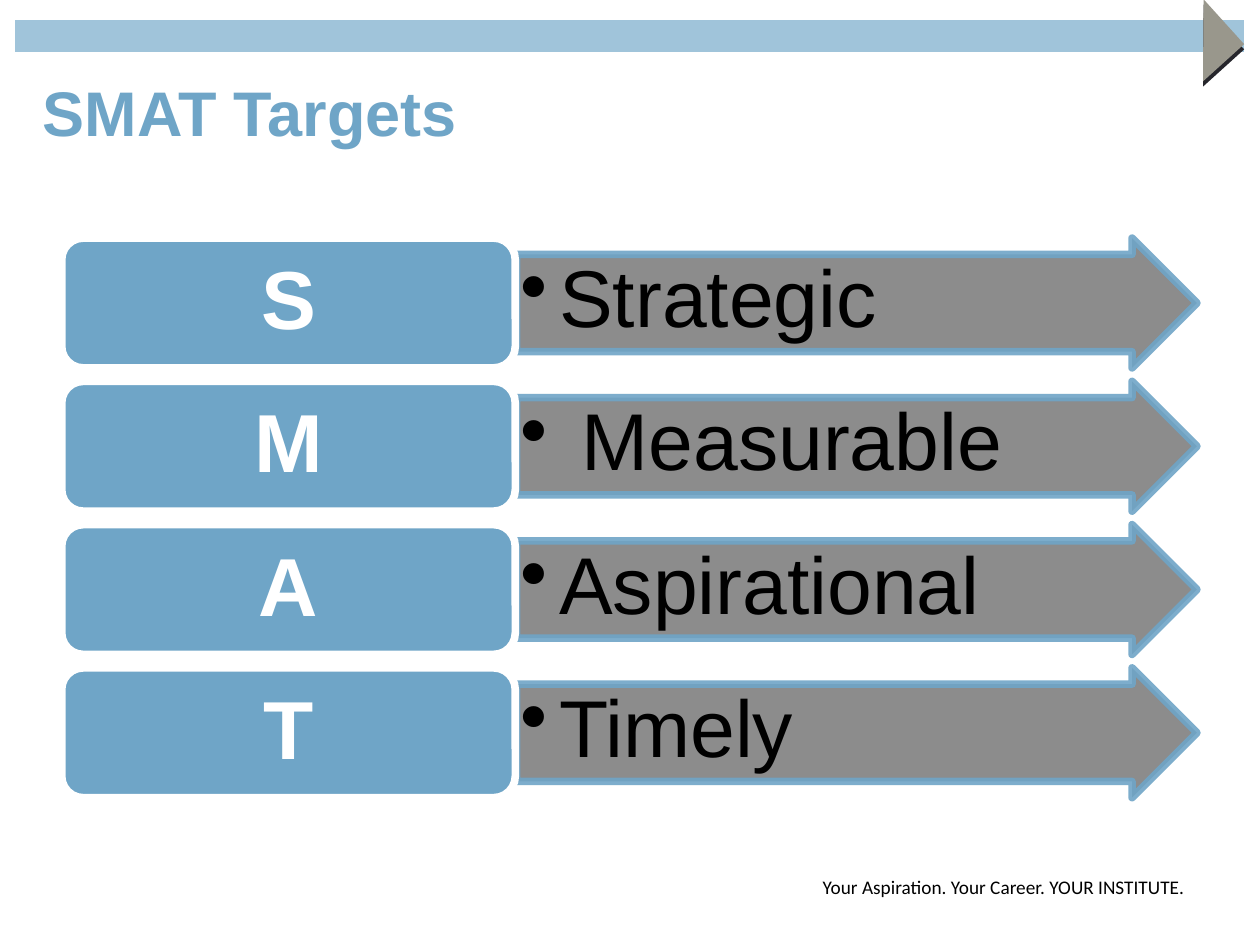
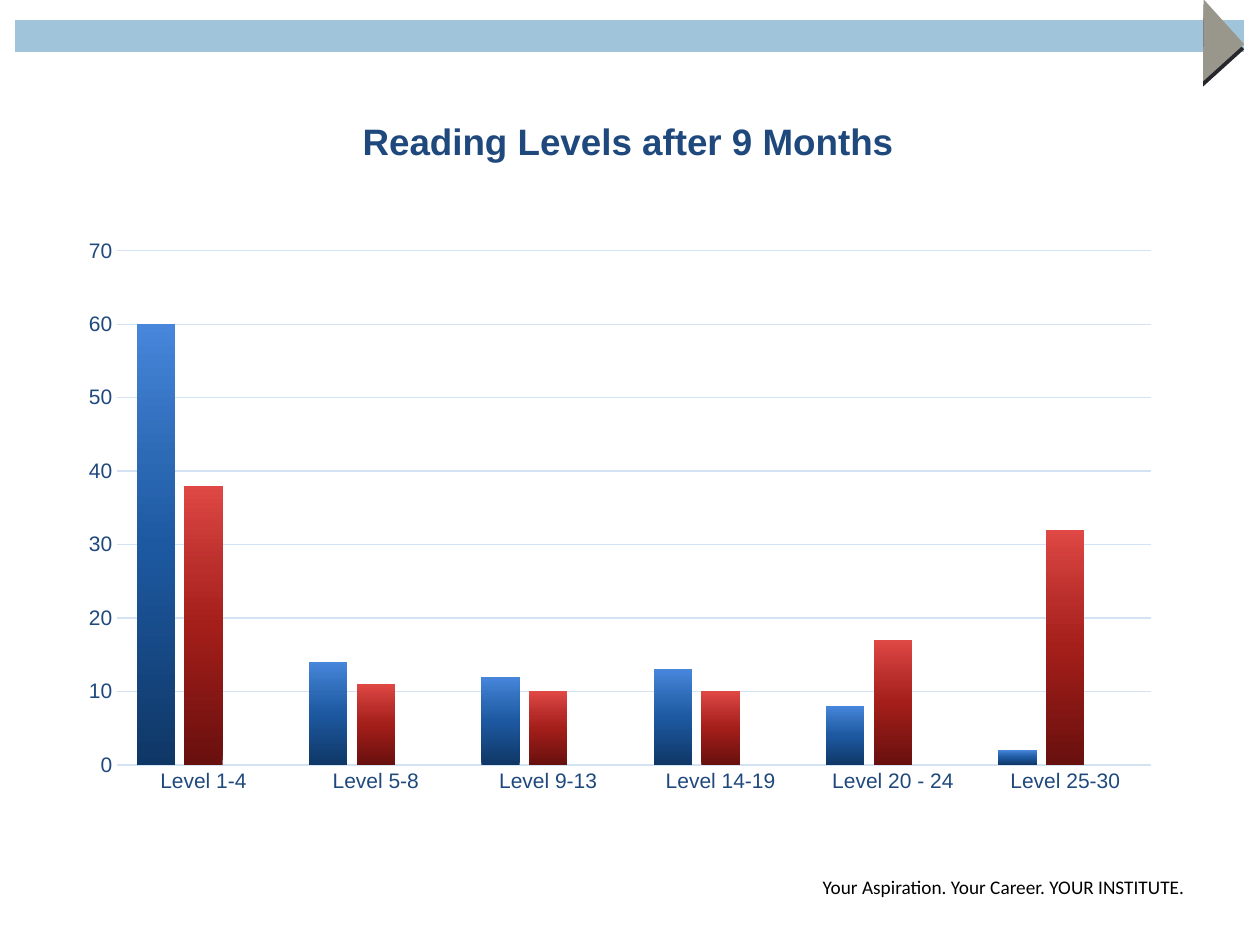
import lxml.etree
import pptx
import pptx.chart.data
import pptx.dml.color
import pptx.enum.chart
import pptx.enum.shapes
import pptx.enum.text
import pptx.oxml.ns
import pptx.util

Inches, Pt, qn = pptx.util.Inches, pptx.util.Pt, pptx.oxml.ns.qn
Preset = pptx.enum.shapes.MSO_SHAPE
Align = pptx.enum.text.PP_ALIGN
Anchor = pptx.enum.text.MSO_ANCHOR

TITLE_ONLY, BLANK = 5, 6
SKY, BAND, GREY, STONE = "6FA5C7", "A0C4DA", "808080", "99978C"
NAVY, PALE, INK, BLACK, WHITE = "1F497D", "D4E3F4", "26262C", "000000", "FFFFFF"
MOTTO = "Your Aspiration. Your Career. YOUR INSTITUTE."

TARGETS = [("S", "Strategic"), ("M", " Measurable"),
           ("A", "Aspirational"), ("T", "Timely")]
ROW_TOP, ROW_STEP, ROW_HEIGHT = 1.89, 1.137, 1.03

LEVELS = ["Level 1-4", "Level 5-8", "Level 9-13",
          "Level 14-19", "Level 20 - 24", "Level 25-30"]
GRADIENT_STOPS = (0, 50, 70, 100)
READERS = [
    ("Series 1", (60, 14, 12, 13, 8, 2), ("0F3766", "1D59A1", "2D6AB6", "4786DB")),
    ("Series 2", (38, 11, 10, 10, 17, 32), ("68100E", "A41E1A", "B92E2A", "DF4845")),
    ("Series 3", (None,) * 6, ("4A6316", "769C27", "89B137", "A9D651")),
]


def color(hex_code):
    return pptx.dml.color.RGBColor.from_string(hex_code)


def assign(target, **values):
    for name, value in values.items():
        setattr(target, name, value)


def child(parent, tag, **attributes):
    values = {name: str(value) for name, value in attributes.items()}
    return lxml.etree.SubElement(parent, qn(tag), values)


def place(box):
    return [Inches(length) for length in box]


def set_font(font, size, hex_code, bold=False, name="Arial"):
    assign(font, size=Pt(size), bold=bold, name=name)
    font.color.rgb = color(hex_code)


def set_line(line, hex_code, width):
    line.color.rgb = color(hex_code)
    line.width = Pt(width)


def set_layout(parent, target=None, **fractions):
    """Fix a chart part at fractions of the chart's size."""
    layout = parent.find(qn("c:layout"))
    if layout is None:
        layout = lxml.etree.Element(qn("c:layout"))
        parent.insert(0, layout)
    manual = child(layout, "c:manualLayout")
    if target:
        child(manual, "c:layoutTarget", val=target)
    for mode in ("c:xMode", "c:yMode"):
        child(manual, mode, val="edge")
    for side, fraction in fractions.items():
        child(manual, f"c:{side}", val=fraction)


class Deck:
    def __init__(self):
        self.presentation = pptx.Presentation()
        assign(self.presentation, slide_width=Inches(10), slide_height=Inches(7.5))
        self.slide = None

    def new_slide(self, layout):
        """Add a slide with the band, corner marker and motto."""
        layouts = self.presentation.slide_layouts
        self.slide = self.presentation.slides.add_slide(layouts[layout])
        self.shape(Preset.FLOWCHART_PROCESS, (0.12, 0.16, 9.75, 0.25), BAND)
        self.corner_marker()
        motto = self.slide.shapes.add_textbox(*place((5.52, 6.9, 3.98, 0.29)))
        motto.text_frame.word_wrap = True
        self.add_words(motto.text_frame, MOTTO, 11, BLACK, Align.RIGHT, name="Calibri")

    def corner_marker(self):
        marker = self.shape(Preset.ISOSCELES_TRIANGLE, (9.31, 0.1, 0.48, 0.44),
                            STONE, adjustments=(0,))
        marker.rotation = 227.9
        effects = marker.element.spPr.find(qn("a:effectLst"))
        shadow = child(effects, "a:outerShdw", dist=Pt(3), dir=5400000, rotWithShape=0)
        child(shadow, "a:srgbClr", val=INK)

    def shape(self, preset, box, fill, line=None, adjustments=(), opacity=None):
        shape = self.slide.shapes.add_shape(preset, *place(box))
        shape.shadow.inherit = False
        for index, value in enumerate(adjustments):
            shape.adjustments[index] = value
        shape.fill.solid()
        shape.fill.fore_color.rgb = color(fill)
        if line:
            set_line(shape.line, line, 4.33)
        else:
            shape.line.fill.background()
        if opacity:
            for tint in shape.element.spPr.iter(qn("a:srgbClr")):
                child(tint, "a:alpha", val=opacity * 1000)
        return shape

    def add_words(self, frame, words, size, hex_code, align, bold=False, name="Arial"):
        paragraph = frame.paragraphs[0]
        paragraph.alignment = align
        run = paragraph.add_run()
        run.text = words
        set_font(run.font, size, hex_code, bold, name)
        return paragraph

    def title(self, words):
        title = self.slide.shapes.title
        left, top, width, height = place((0.24, 0.47, 9, 0.82))
        assign(title, left=left, top=top, width=width, height=height)
        title.text_frame.vertical_anchor = Anchor.MIDDLE
        self.add_words(title.text_frame, words, 36, SKY, Align.LEFT, bold=True)

    def target(self, top, letter, meaning):
        """Draw one row: a letter tile and the arrow that explains it."""
        arrow = self.shape(Preset.RIGHT_ARROW, (4.1, top, 5.4, ROW_HEIGHT), GREY,
                           SKY, (0.75, 0.5), opacity=90)
        inset = Inches(0.03)
        assign(arrow.text_frame, vertical_anchor=Anchor.TOP, word_wrap=True,
               margin_left=inset, margin_right=inset,
               margin_top=inset, margin_bottom=inset)
        item = self.add_words(arrow.text_frame, meaning, 46, BLACK, Align.LEFT)
        assign(item, level=1, line_spacing=0.9)
        properties = item._p.get_or_add_pPr()
        properties.set("marL", str(Inches(0.31)))
        properties.set("indent", str(-Inches(0.31)))
        child(properties, "a:buChar", char="•")

        tile = self.shape(Preset.ROUNDED_RECTANGLE, (0.49, top, 3.6, ROW_HEIGHT),
                          SKY, WHITE)
        tile.text_frame.vertical_anchor = Anchor.MIDDLE
        initial = self.add_words(tile.text_frame, letter, 47, WHITE, Align.CENTER,
                                 bold=True)
        initial.line_spacing = 0.9

    def column_chart(self, box, heading, categories, series):
        data = pptx.chart.data.CategoryChartData()
        data.categories = categories
        for name, values, _ in series:
            data.add_series(name, values)
        kind = pptx.enum.chart.XL_CHART_TYPE.COLUMN_CLUSTERED
        chart = self.slide.shapes.add_chart(kind, *place(box), data).chart
        assign(chart, has_legend=False, has_title=True)
        set_font(chart.font, 10, BLACK)
        self.add_words(chart.chart_title.text_frame, heading, 21, NAVY, Align.CENTER,
                       bold=True)
        set_layout(chart.element.xpath("c:chart/c:title")[0], x=0.26, y=0.04)
        set_layout(chart.element.xpath("c:chart/c:plotArea")[0], "inner",
                   x=0.05, y=0.23, w=0.91, h=0.7)
        assign(chart.plots[0], gap_width=100, overlap=-24, vary_by_categories=False)
        self.style_axes(chart)
        for bars, (_, _, shades) in zip(chart.plots[0].series, series):
            self.shade(bars, shades)

    def style_axes(self, chart):
        no_tick = pptx.enum.chart.XL_TICK_MARK.NONE
        for axis in (chart.category_axis, chart.value_axis):
            assign(axis, major_tick_mark=no_tick, minor_tick_mark=no_tick)
            set_font(axis.tick_labels.font, 12, NAVY)
        set_line(chart.category_axis.format.line, PALE, 0.75)
        scale = chart.value_axis
        assign(scale, minimum_scale=0, maximum_scale=70, major_unit=10)
        scale.format.line.fill.background()
        set_line(scale.major_gridlines.format.line, PALE, 0.75)

    def shade(self, bars, shades):
        """Fill bars with a gradient that rises from the first shade."""
        bars.invert_if_negative = False
        fill = bars.format.fill
        fill.gradient()
        fill.gradient_angle = 90
        stops = next(bars._element.iter(qn("a:gsLst")))
        for stop in list(stops):
            stops.remove(stop)
        for position, shade in zip(GRADIENT_STOPS, shades):
            child(child(stops, "a:gs", pos=position * 1000), "a:srgbClr", val=shade)


def main():
    deck = Deck()

    deck.new_slide(TITLE_ONLY)
    deck.title("SMAT Targets")
    for row, (letter, meaning) in enumerate(TARGETS):
        deck.target(ROW_TOP + row * ROW_STEP, letter, meaning)

    deck.new_slide(BLANK)
    deck.column_chart((0.48, 0.65, 9.02, 5.83), "Reading Levels after 9 Months",
                      LEVELS, READERS)

    deck.presentation.save("out.pptx")


if __name__ == "__main__":
    main()
